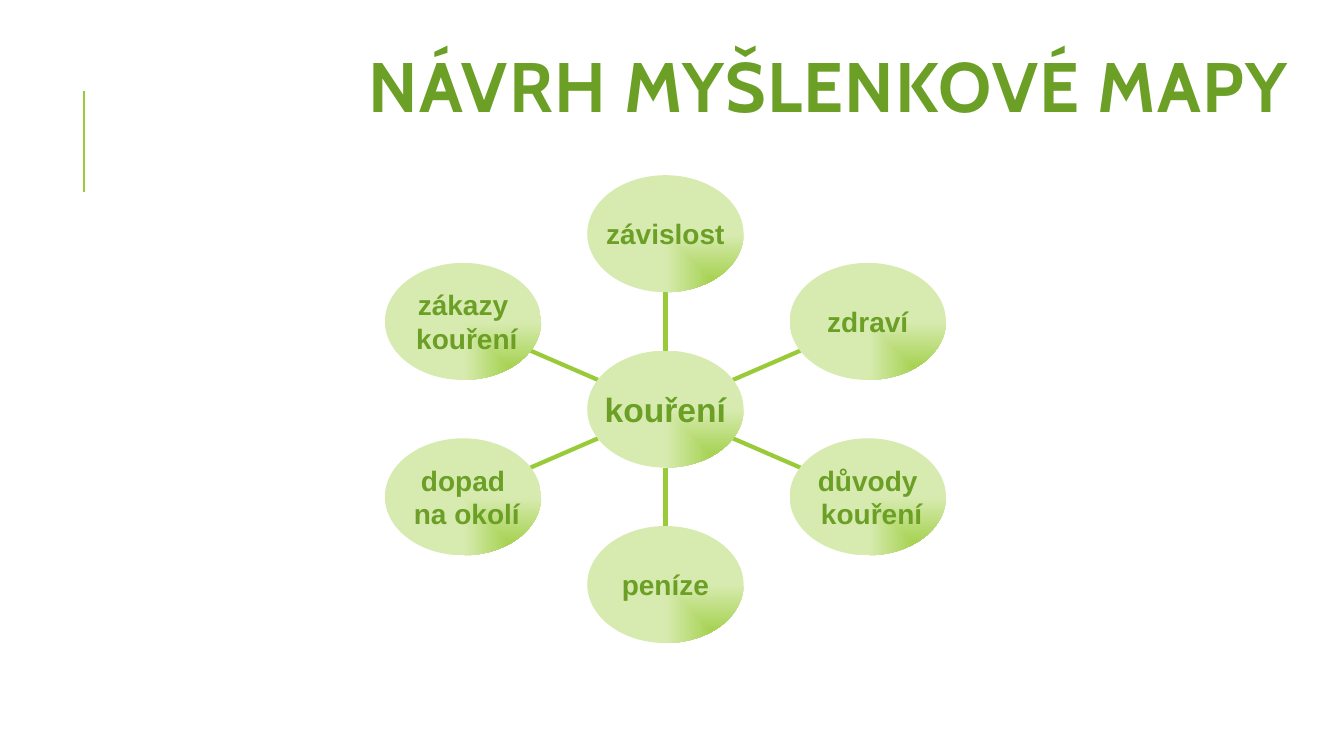
from typing import NamedTuple

from lxml import etree
from pptx import Presentation
from pptx import util as u
from pptx.dml.color import RGBColor
from pptx.enum import shapes, text
from pptx.oxml.ns import qn

HUES = {"line": "99CB38", "pale": "D7EBB0", "ink": "6B9F25"}
MID_X, MID_Y = 16.77, 10.31  # centre of the map, cm
WIDE, HIGH = 3.94, 2.95  # bubble size, cm
STEP_X, STEP_Y = 5.1, 2.21  # spacing of the bubbles, cm


class Bubble(NamedTuple):
    words: str
    col: int  # steps to the right of the centre
    row: int  # steps below the centre
    size: int = 20


HUB = Bubble("kouření", 0, 0, 24)
RING = [
    Bubble("zákazy\n kouření", -1, -1),
    Bubble("dopad\n na okolí", -1, 1),
    Bubble("peníze", 0, 2),
    Bubble("důvody\n kouření", 1, 1),
    Bubble("zdraví", 1, -1),
    Bubble("závislost", 0, -2),
]


def hue(name: str) -> RGBColor:
    return RGBColor.from_string(HUES[name])


def spot(item: Bubble, part: float = 1) -> tuple[float, float]:
    """Point the given part of the way from the hub to a bubble."""
    return MID_X + part * item.col * STEP_X, MID_Y + part * item.row * STEP_Y


def add_line(slide, start: tuple[float, float], end: tuple[float, float], width: float) -> None:
    ends = [u.Cm(value) for value in (*start, *end)]
    line = slide.shapes.add_connector(shapes.MSO_CONNECTOR.STRAIGHT, *ends)
    line.line.color.rgb = hue("line")
    line.line.width = u.Pt(width)
    etree.SubElement(line._element.spPr, qn("a:effectLst"))


def set_text(frame, words: str, font: str, size: int) -> None:
    frame.text = words
    frame.vertical_anchor = text.MSO_ANCHOR.MIDDLE
    frame.margin_left = frame.margin_right = 0
    frame.margin_top = frame.margin_bottom = 0
    for para in frame.paragraphs:
        para.alignment = text.PP_ALIGN.CENTER
        for run in para.runs:
            run.font.name = font
            run.font.size = u.Pt(size)
            run.font.bold = True
            run.font.color.rgb = hue("ink")


def add_bubble(slide, item: Bubble) -> None:
    x, y = spot(item)
    oval = slide.shapes.add_shape(
        shapes.MSO_SHAPE.OVAL,
        u.Cm(x - WIDE / 2), u.Cm(y - HIGH / 2), u.Cm(WIDE), u.Cm(HIGH))
    oval.shadow.inherit = False
    oval.line.fill.background()
    # Gradient that spreads from the lower right corner
    oval.fill.gradient()
    for stop, name in zip(oval.fill.gradient_stops, ("line", "pale")):
        stop.color.rgb = hue(name)
    grad = oval._element.spPr.find(qn("a:gradFill"))
    grad.remove(grad.find(qn("a:lin")))
    way = etree.SubElement(grad, qn("a:path"), {"path": "rect"})
    etree.SubElement(way, qn("a:fillToRect"), {"l": "100000", "t": "100000"})
    set_text(oval.text_frame, item.words, "Arial", item.size)
    oval.text_frame.word_wrap = False


def add_title(slide, words: str) -> None:
    box = slide.shapes.add_textbox(u.Cm(9.04), u.Cm(0.64), u.Cm(23.7), u.Cm(3.38))
    frame = box.text_frame
    frame.word_wrap = True
    set_text(frame, words, "Cabin", 50)
    para = frame.paragraphs[0]
    para.line_spacing = 0.8
    para.runs[0].font._element.set("spc", "100")


def main() -> None:
    deck = Presentation()
    deck.slide_width, deck.slide_height = u.Cm(33.87), u.Cm(19.05)
    slide = deck.slides.add_slide(deck.slide_layouts[6])

    # Side rule and title
    add_line(slide, (2.11, 4.83), (2.11, 2.29), 1.5)
    add_title(slide, "NÁVRH MYŠLENKOVÉ MAPY")

    # Mind map: each spoke fills the middle third of its way
    for item in RING:
        add_line(slide, spot(item, 1 / 3), spot(item, 2 / 3), 3)
        add_bubble(slide, item)
    add_bubble(slide, HUB)

    deck.save("out.pptx")


if __name__ == "__main__":
    main()
